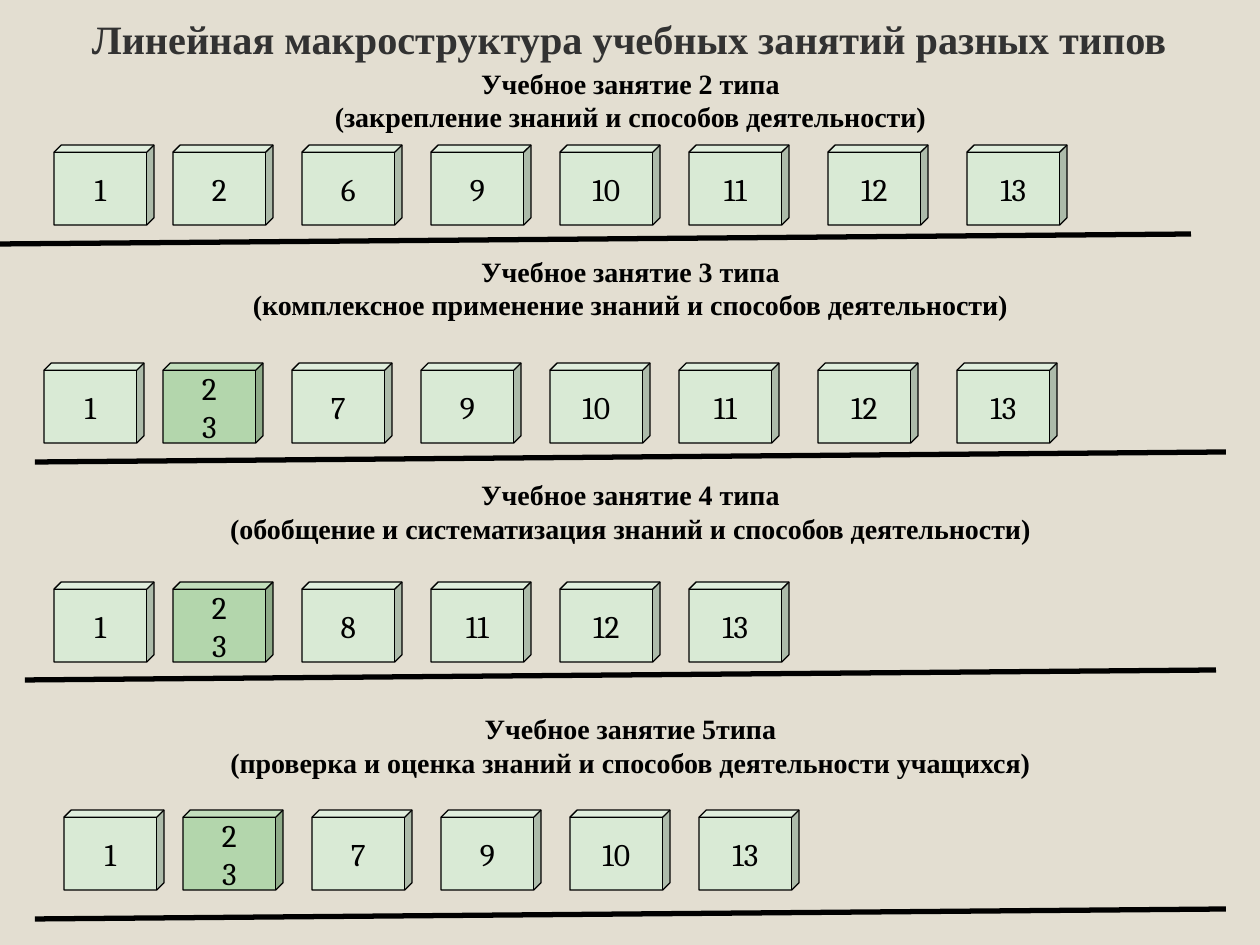
from itertools import accumulate

from lxml import etree
from pptx import Presentation
from pptx import util as u
from pptx.dml.color import RGBColor
from pptx.enum import shapes, text
from pptx.oxml.ns import qn

TITLE = "Линейная макроструктура учебных занятий разных типов"
# Lengths are px; "stages" run left to right, two numbers share a cube
LESSONS = [
    {"caption": "Учебное занятие 2 типа\v(закрепление знаний и способов деятельности)",
     "caption_top": 66, "stages": ["1", "2", "6", "9", "10", "11", "12", "13"],
     "cubes_at": (54, 145), "rule_at": (0, 244)},
    {"caption": "Учебное занятие 3 типа\v(комплексное применение знаний и способов деятельности)",
     "caption_top": 254, "stages": ["1", "2\n3", "7", "9", "10", "11", "12", "13"],
     "cubes_at": (44, 363), "rule_at": (35, 462)},
    {"caption": "Учебное занятие 4 типа\v(обобщение и систематизация знаний и способов деятельности)",
     "caption_top": 477, "stages": ["1", "2\n3", "8", "11", "12", "13"],
     "cubes_at": (54, 582), "rule_at": (25, 680)},
    {"caption": "Учебное занятие 5типа\v(проверка и оценка знаний и способов деятельности учащихся)",
     "caption_top": 711, "stages": ["1", "2\n3", "7", "9", "10", "13"],
     "cubes_at": (64, 810), "rule_at": (35, 919)},
]
COLORS = {"background": "E3DED1", "title": "323232", "ink": "000000",
          "single": "D9EAD5", "double": "B3D6AC"}
CUBE_SIZE = (100, 80)
CUBE_OFFSETS = list(accumulate([0, 119, 129, 129, 129, 129, 139, 139]))
RULE_WIDTH, RULE_RISE = 1191, 10


def px(*lengths):
    return [u.Emu(length * 914400 // 126) for length in lengths]


def color(name):
    return RGBColor.from_string(COLORS[name])


def write(shape, content, font_name, size, ink="ink", bold=False):
    frame = shape.text_frame
    frame.text = content
    frame.vertical_anchor = text.MSO_ANCHOR.MIDDLE
    for paragraph in frame.paragraphs:
        paragraph.alignment = text.PP_ALIGN.CENTER
        for run in paragraph.runs:
            run.font.name = font_name
            run.font.size = u.Pt(size)
            run.font.bold = bold
            run.font.color.rgb = color(ink)


def add_heading(slide, content, box, size, ink="ink"):
    heading = slide.shapes.add_textbox(*px(*box))
    heading.text_frame.word_wrap = True
    write(heading, content, "Times New Roman", size, ink, bold=True)


def add_cube(slide, stage, left, top):
    cube = slide.shapes.add_shape(shapes.MSO_SHAPE.CUBE, *px(left, top, *CUBE_SIZE))
    cube.adjustments[0] = 0.09
    cube.shadow.inherit = False
    cube.fill.solid()
    cube.fill.fore_color.rgb = color("double" if "\n" in stage else "single")
    cube.line.color.rgb = color("ink")
    cube.line.width = u.Pt(0.75)
    cube.text_frame.word_wrap = False
    write(cube, stage, "Cambria", 18)


def add_rule(slide, left, top):
    rule = slide.shapes.add_connector(
        shapes.MSO_CONNECTOR.STRAIGHT,
        *px(left, top, left + RULE_WIDTH, top - RULE_RISE))
    rule.line.color.rgb = color("ink")
    rule.line.width = u.Pt(3)
    etree.SubElement(rule._element.spPr, qn("a:effectLst"))


def main():
    presentation = Presentation()
    presentation.slide_width, presentation.slide_height = px(1260, 945)
    slide = presentation.slides.add_slide(presentation.slide_layouts[6])
    slide.background.fill.solid()
    slide.background.fill.fore_color.rgb = color("background")

    add_heading(slide, TITLE, (0, 0, 1260, 76), 23, "title")
    for lesson in LESSONS:
        add_heading(slide, lesson["caption"], (64, lesson["caption_top"], 1133, 68), 16)
        left, top = lesson["cubes_at"]
        for stage, offset in zip(lesson["stages"], CUBE_OFFSETS):
            add_cube(slide, stage, left + offset, top)
        add_rule(slide, *lesson["rule_at"])

    presentation.save("out.pptx")


if __name__ == "__main__":
    main()
